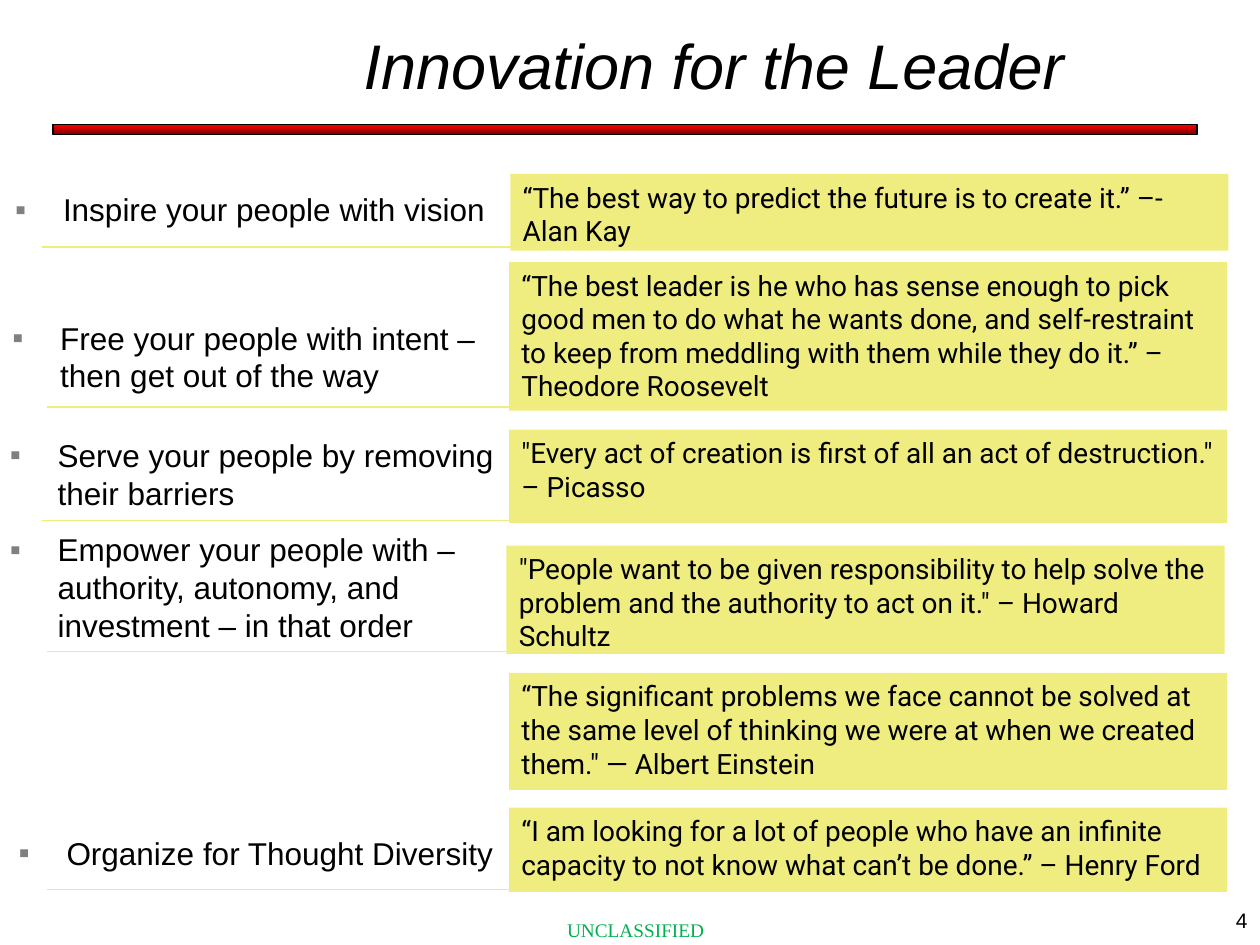
import pptx
import pptx.util
import pptx.dml.color
import pptx.enum.shapes
import pptx.enum.text
import pptx.oxml
import pptx.oxml.ns

Inches = pptx.util.Inches
RGB = pptx.dml.color.RGBColor.from_string
ALIGN = pptx.enum.text.PP_ALIGN
ANCHOR = pptx.enum.text.MSO_ANCHOR

TITLE = "Innovation for the Leader"
MARKING = "UNCLASSIFIED"
PAGE = "4"

QUOTES = [
    ("“The best way to predict the future is to create it.” –- Alan Kay", 4.05, 1.38, 0.61),
    ("“The best leader is he who has sense enough to pick good men to do what he wants done, "
     "and self-restraint to keep from meddling with them while they do it.” – Theodore Roosevelt",
     4.04, 2.08, 1.18),
    ("\"Every act of creation is first of all an act of destruction.\" – Picasso", 4.04, 3.41, 0.74),
    ("\"People want to be given responsibility to help solve the problem and the authority "
     "to act on it.\" – Howard Schultz", 4.02, 4.33, 0.86),
    ("“The significant problems we face cannot be solved at the same level of thinking we were at "
     "when we created them.\" ― Albert Einstein", 4.04, 5.34, 0.93),
    ("“I am looking for a lot of people who have an infinite capacity to not know what can’t be "
     "done.” – Henry Ford", 4.04, 6.41, 0.67),
]
POINTS = [
    ("Inspire your people with vision", 0.02, 1.46, 0.79),
    ("Free your people with intent – then get out of the way", 0, 2.48, 0.94),
    ("Serve your people by removing their barriers", -0.02, 3.41, 0.8),
    ("Empower your people with – authority, autonomy, and investment – in that order",
     -0.02, 4.16, 1.17),
    ("Organize for Thought Diversity", 0.05, 6.57, 0.68),
]
RULES = [(0.33, 1.96), (0.37, 3.23), (0.33, 4.13), (0.37, 5.17), (0.37, 7.06)]
QUOTE_W, POINT_W, RULE_W = 5.7, 4.06, 6.08

THEME = {
    "panel": "EFEC80", "bullet": "808080", "bar": ("FF0000", "760000"), "outline": "000000",
    "title": {"name": "Arial", "size": 36, "color": "000000", "italic": True},
    "point": {"name": "Arial", "size": 18, "color": "000000"},
    "quote": {"name": "Roboto", "size": 16, "color": "000000"},
    "marking": {"name": "Times New Roman", "size": 11, "color": "00B050"},
    "page": {"name": "Arial", "size": 12, "color": "000000"},
}


def place(sp, *box):
    for name, value in zip(("left", "top", "width", "height"), box):
        setattr(sp, name, Inches(value))


def write(sp, text, style, align=ALIGN.LEFT, anchor=ANCHOR.TOP, bullet=False):
    tf = sp.text_frame
    tf.word_wrap = True
    tf.auto_size = pptx.enum.text.MSO_AUTO_SIZE.NONE
    tf.vertical_anchor = anchor
    p = tf.paragraphs[0]
    p.alignment = align
    p.space_before = pptx.util.Pt(0)
    if bullet:
        add_bullet(p)
    r = p.add_run()
    r.text = text
    for name, value in THEME[style].items():
        if name == "color":
            r.font.color.rgb = RGB(value)
        else:
            setattr(r.font, name, pptx.util.Pt(value) if name == "size" else value)


def add_bullet(p):
    pPr = p._p.get_or_add_pPr()
    pPr.set("marL", str(Inches(0.38)))
    pPr.set("indent", str(Inches(-0.38)))
    ns = pptx.oxml.ns.nsdecls("a")
    for xml in (f'<a:buClr {ns}><a:srgbClr val="{THEME["bullet"]}"/></a:buClr>',
                f'<a:buFont {ns} typeface="Arial"/>',
                f'<a:buChar {ns} char="▪"/>'):
        pPr.append(pptx.oxml.parse_xml(xml))


def add_rect(shapes, *box):
    sp = shapes.add_shape(pptx.enum.shapes.MSO_SHAPE.RECTANGLE, *map(Inches, box))
    sp.shadow.inherit = False
    return sp


def add_text(shapes, box, *args, **kwargs):
    write(shapes.add_textbox(*map(Inches, box)), *args, **kwargs)


def add_rule(shapes, x, y):
    line = shapes.add_connector(pptx.enum.shapes.MSO_CONNECTOR.STRAIGHT,
                                *map(Inches, (x, y, x + RULE_W, y)))
    line.line.color.rgb = RGB(THEME["panel"])
    line.line.width = pptx.util.Pt(0.75)
    ns = pptx.oxml.ns.nsdecls("a")
    line._element.spPr.append(pptx.oxml.parse_xml(f"<a:effectLst {ns}/>"))


def add_bar(shapes):
    bar = add_rect(shapes, 0.42, 0.99, 9.08, 0.08)
    bar.fill.gradient()
    bar.fill.gradient_angle = 270
    for i, (stop, color) in enumerate(zip(bar.fill.gradient_stops, THEME["bar"])):
        stop.color.rgb = RGB(color)
        stop.position = i
    bar.line.color.rgb = RGB(THEME["outline"])
    bar.line.width = pptx.util.Pt(0.75)


def main():
    prs = pptx.Presentation()
    prs.slide_width, prs.slide_height = Inches(10), Inches(7.5)
    s = prs.slides.add_slide(prs.slide_layouts[1])
    shapes = s.shapes

    place(shapes.title, 1.47, 0.17, 8.39, 0.68)
    write(shapes.title, TITLE, "title", ALIGN.CENTER, ANCHOR.MIDDLE)
    add_bar(shapes)

    for x, y in RULES:
        add_rule(shapes, x, y)

    for text, x, y, h in QUOTES:
        sp = add_rect(shapes, x, y, QUOTE_W, h)
        sp.fill.solid()
        sp.fill.fore_color.rgb = RGB(THEME["panel"])
        sp.line.fill.background()
        write(sp, text, "quote")

    (text, x, y, h), *others = POINTS
    body = s.placeholders[1]
    place(body, x, y, POINT_W, h)
    write(body, text, "point", bullet=True)
    for text, x, y, h in others:
        add_text(shapes, (x, y, POINT_W, h), text, "point", bullet=True)

    add_text(shapes, (3, 7.24, 4.09, 0.29), MARKING, "marking", ALIGN.CENTER)
    add_text(shapes, (9, 7.1, 1, 0.4), PAGE, "page", ALIGN.RIGHT, ANCHOR.MIDDLE)
    prs.save("out.pptx")


if __name__ == "__main__":
    main()
